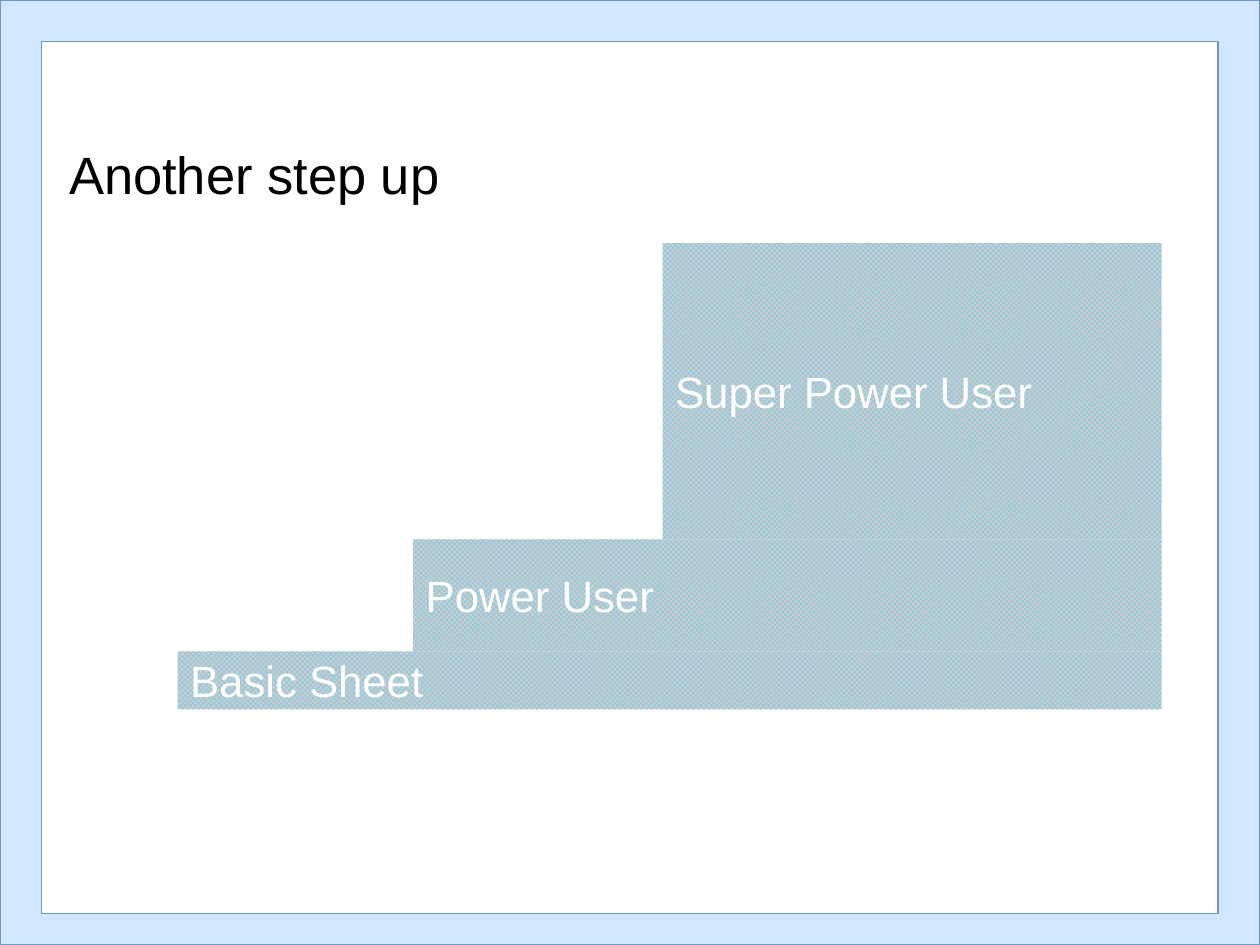
from pptx import Presentation
from pptx.dml.color import RGBColor
from pptx.enum.dml import MSO_PATTERN
from pptx.enum.shapes import MSO_SHAPE
from pptx.enum.text import MSO_ANCHOR, PP_ALIGN
from pptx.util import Inches, Pt

RECTANGLE = MSO_SHAPE.RECTANGLE
TRELLIS = MSO_PATTERN.TRELLIS
MIDDLE = MSO_ANCHOR.MIDDLE
LEFT = PP_ALIGN.LEFT

FONT = "Arial"
COLORS = {
    "background": "70B8FF",
    "frame": "D1E6FF",
    "page": "FFFFFF",
    "border": "7197BD",
    "hatch": "34C9FE",
    "step": "CCCCCC",
    "label": "FFFFFF",
    "title": "000000",
}


def color(name):
    return RGBColor.from_string(COLORS[name])


def add_rectangle(slide, left, top, width, height):
    rectangle = slide.shapes.add_shape(
        RECTANGLE, Inches(left), Inches(top), Inches(width), Inches(height))
    rectangle.shadow.inherit = False
    return rectangle


def write_line(paragraph, wording, size, color_name):
    paragraph.alignment = LEFT
    run = paragraph.add_run()
    run.text = wording
    run.font.name = FONT
    run.font.size = Pt(size)
    run.font.color.rgb = color(color_name)


def add_frame(slide, width, height, margin, bottom_margin):
    panels = (
        ("frame", (0, 0, width, height)),
        ("page", (margin, margin, width - 2 * margin,
                  height - margin - bottom_margin)),
    )
    for fill_name, box in panels:
        panel = add_rectangle(slide, *box)
        panel.fill.solid()
        panel.fill.fore_color.rgb = color(fill_name)
        panel.line.color.rgb = color("border")
        panel.line.width = Pt(1)


def add_title(slide, left, top, width, height):
    title = slide.shapes.add_textbox(
        Inches(left), Inches(top), Inches(width), Inches(height))
    frame = title.text_frame
    frame.word_wrap = True
    frame.margin_top = Inches(0.09)
    write_line(frame.paragraphs[0], "Another step up", 30, "title")


def add_staircase(slide, left, top, width, height, steps):
    right, bottom = left + width, top + height
    for wording, indent, rise in steps:
        bottom -= rise
        step_left = left + indent
        step = add_rectangle(slide, step_left, bottom, right - step_left, rise)
        step.fill.patterned()
        step.fill.pattern = TRELLIS
        step.fill.fore_color.rgb = color("hatch")
        step.fill.back_color.rgb = color("step")
        step.line.fill.background()
        frame = step.text_frame
        frame.word_wrap = True
        frame.vertical_anchor = MIDDLE
        write_line(frame.paragraphs[0], wording, 25, "label")


def main():
    presentation = Presentation()
    presentation.slide_width = Inches(10)
    presentation.slide_height = Inches(7.5)
    slide = presentation.slides.add_slide(presentation.slide_layouts[6])
    slide.background.fill.solid()
    slide.background.fill.fore_color.rgb = color("background")

    add_frame(slide, 10, 7.5, 0.33, 0.25)
    add_title(slide, 0.45, 1.04, 9.17, 0.54)
    steps = (
        ("Basic Sheet", 0, 0.46),
        ("Power User", 1.87, 0.89),
        ("Super Power User", 3.85, 2.35),
    )
    add_staircase(slide, 1.41, 1.93, 7.81, 3.7, steps)
    presentation.save("out.pptx")


if __name__ == "__main__":
    main()
